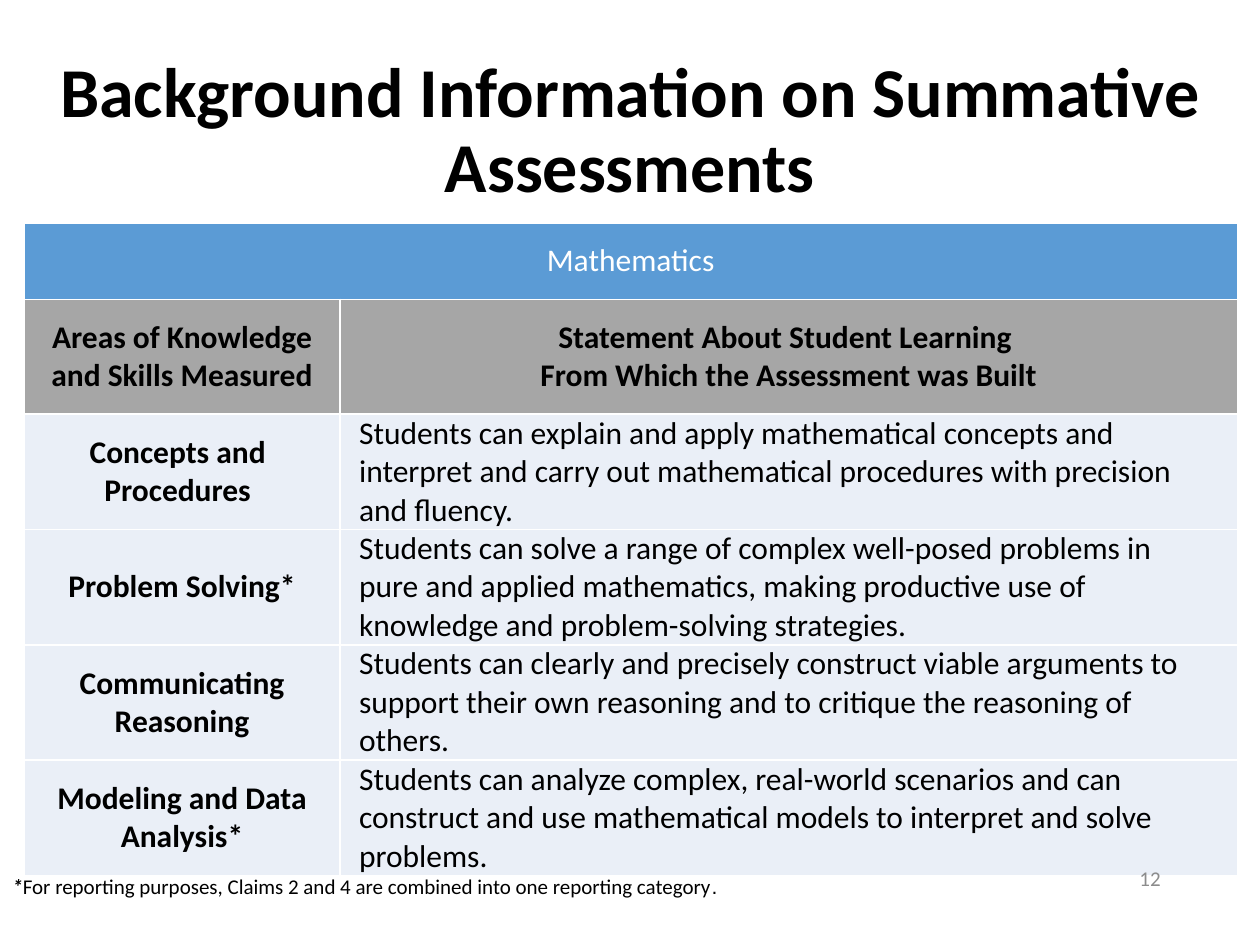
from lxml.etree import SubElement
from pptx import Presentation
from pptx.dml.color import RGBColor
from pptx.enum.text import MSO_ANCHOR as Anchor, PP_ALIGN as Align
from pptx.oxml.ns import qn
from pptx.util import Inches, Pt

ROWS = [
    ("Concepts and Procedures",
     "Students can explain and apply mathematical concepts and interpret and "
     "carry out mathematical procedures with precision and fluency."),
    ("Problem Solving*",
     "Students can solve a range of complex well-posed problems in pure and "
     "applied mathematics, making productive use of knowledge and "
     "problem-solving strategies."),
    ("Communicating Reasoning",
     "Students can clearly and precisely construct viable arguments to support "
     "their own reasoning and to critique the reasoning of others."),
    ("Modeling and Data Analysis*",
     "Students can analyze complex, real-world scenarios and can construct and "
     "use mathematical models to interpret and solve problems."),
]
HEADS = ["Areas of Knowledge and Skills Measured",
         "Statement About Student Learning \nFrom Which the Assessment was Built"]
WIDTHS = [2.51, 7.12]
HEIGHTS = [0.6, 0.91] + [0.91] * len(ROWS)


def color(text):
    return RGBColor.from_string(text)


def apply(obj, values):
    """Set each named attribute of obj."""
    for name, value in values.items():
        setattr(obj, name, value)


class Deck:
    """Holds the text style and the current slide."""
    face, ink, line = "Calibri", "000000", "FFFFFF"

    def __init__(self, slide):
        self.slide = slide

    def run(self, para, text, size, tone=None, **style):
        run = para.add_run()
        run.text = text
        apply(run.font, {"name": self.face, "size": Pt(size), **style})
        run.font.color.rgb = color(tone or self.ink)

    def box(self, place, runs, anchor=Anchor.TOP, **form):
        """Add a text box with one paragraph; runs are (text, size, style)."""
        frame = self.slide.shapes.add_textbox(*map(Inches, place)).text_frame
        apply(frame, {"word_wrap": True, "vertical_anchor": anchor})
        para = frame.paragraphs[0]
        apply(para, form)
        for text, size, style in runs:
            self.run(para, text, size, **style)

    def edge(self, cell, side):
        props = cell._tc.get_or_add_tcPr()
        line = SubElement(props, qn(f"a:{side}"), w=str(Pt(1)))
        fill = SubElement(line, qn("a:solidFill"))
        SubElement(fill, qn("a:srgbClr"), val=self.line)

    def cell(self, cell, text, fill, pad=(0, 0, 0), anchor=Anchor.MIDDLE,
             align=Align.CENTER, **style):
        """Fill a table cell; pad is left, right, and top with bottom."""
        left, right, ends = map(Inches, pad)
        apply(cell, {"margin_left": left, "margin_right": right,
                     "margin_top": ends, "margin_bottom": ends,
                     "vertical_anchor": anchor})
        for side in ("lnL", "lnR", "lnT", "lnB"):
            self.edge(cell, side)
        cell.fill.solid()
        cell.fill.fore_color.rgb = color(fill)
        frame = cell.text_frame
        for i, part in enumerate(text.split("\n")):
            para = frame.add_paragraph() if i else frame.paragraphs[0]
            para.alignment = align
            self.run(para, part, 18, **style)

    def table(self, place):
        table = self.slide.shapes.add_table(
            len(HEIGHTS), len(WIDTHS), *map(Inches, place)).table
        apply(table, {"first_row": False, "horz_banding": False})
        for col, width in zip(table.columns, WIDTHS):
            col.width = Inches(width)
        for row, height in zip(table.rows, HEIGHTS):
            row.height = Inches(height)

        head = {"pad": (0.15, 0.15, 0.15), "anchor": Anchor.TOP}
        table.cell(0, 0).merge(table.cell(0, 1))
        for i, text in enumerate(["Mathematics", ""]):
            self.cell(table.cell(0, i), text, "5B9BD5", tone="FFFFFF",
                      bold=False, **head)
        for i, text in enumerate(HEADS):
            self.cell(table.cell(1, i), text, "A6A6A6", bold=True, **head)
        for i, (area, claim) in enumerate(ROWS, 2):
            inset = 0.07 if i == 2 else 0
            self.cell(table.cell(i, 0), area, "EAEFF7", pad=(0, inset, 0),
                      bold=True)
            self.cell(table.cell(i, 1), claim, "EAEFF7", pad=(0.15, 0.37, 0),
                      align=Align.LEFT, bold=False)


def main():
    prs = Presentation()
    apply(prs, {"slide_width": Inches(10), "slide_height": Inches(7.5)})
    deck = Deck(prs.slides.add_slide(prs.slide_layouts[6]))
    deck.table((0.19, 1.77, 9.63, 5.11))
    deck.box((0, 6.88, 10, 0.3), [
        ("*", 12, {"bold": True, "italic": True}),
        ("For reporting purposes, Claims 2 and 4 are combined into one "
         "reporting category", 12, {}),
        (".", 12, {"name": "Arial"})])
    deck.box((0, 0.4, 10, 1.3),
             [("Background Information on Summative Assessments", 40,
               {"bold": True})],
             Anchor.MIDDLE, alignment=Align.CENTER, line_spacing=0.9)
    deck.box((7.06, 6.77, 2.25, 0.4), [("12", 12, {"tone": "8C8C8C"})],
             Anchor.MIDDLE, alignment=Align.RIGHT)
    prs.save("out.pptx")


if __name__ == "__main__":
    main()
